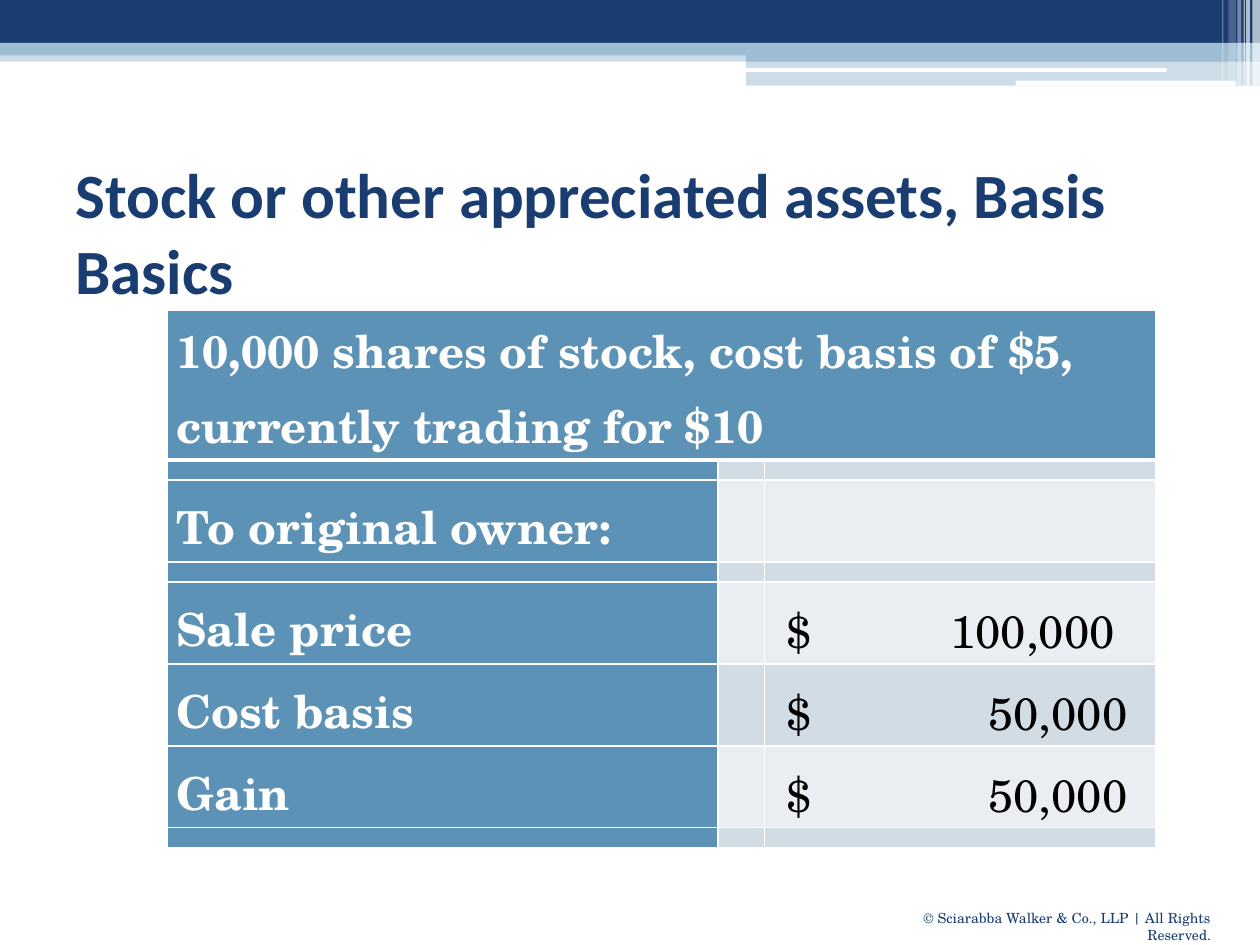
from lxml import etree
from pptx import Presentation
from pptx import util as u
from pptx.dml.color import RGBColor
from pptx.enum import shapes, text
from pptx.oxml import ns

NAVY = RGBColor(0x19, 0x3D, 0x71)
SKY = RGBColor(0x9D, 0xBD, 0xD2)
STEEL = RGBColor(0x5C, 0x92, 0xB5)
BAND_DARK = RGBColor(0xD2, 0xDC, 0xE5)
BAND_LIGHT = RGBColor(0xEA, 0xEE, 0xF3)
WHITE = RGBColor(0xFF, 0xFF, 0xFF)
BLACK = RGBColor(0, 0, 0)
SERIF = "TeX Gyre Schola"


def write(frame, content, size, color, font=SERIF, bold=False,
          align=text.PP_ALIGN.LEFT, spacing=None, tab=None):
    frame.word_wrap = True
    para = frame.paragraphs[0]
    para.alignment = align
    if spacing:
        para.line_spacing = spacing
    if tab:
        tabs = etree.SubElement(para._p.get_or_add_pPr(), ns.qn("a:tabLst"))
        etree.SubElement(tabs, ns.qn("a:tab"), pos=str(u.Inches(tab)), algn="r")
    span = para.add_run()
    span.text = content
    span.font.name = font
    span.font.size = u.Pt(size)
    span.font.bold = bold
    span.font.color.rgb = color


deck = Presentation()
deck.slide_width, deck.slide_height = u.Inches(10), u.Inches(7.5)
page = deck.slides.add_slide(deck.slide_layouts[6])

RECT = shapes.MSO_SHAPE.RECTANGLE
ROUND = shapes.MSO_SHAPE.ROUNDED_RECTANGLE
stripes = [
    (RECT, 0, 0.4, 10, 0.09, SKY, 50),
    (RECT, 0, 0, 10, 0.34, NAVY, 100),
    (RECT, 0, 0.34, 10, 0.1, SKY, 100),
    (RECT, 5.92, 0.39, 4.08, 0.1, SKY, 100),
    (RECT, 5.92, 0.48, 4.08, 0.2, SKY, 50),
    (ROUND, 5.91, 0.54, 3.35, 0.03, WHITE, 100),
    (ROUND, 8.06, 0.64, 1.75, 0.04, WHITE, 100),
    (RECT, 9.94, 0, 0.06, 0.68, WHITE, 65),
    (RECT, 9.89, 0, 0.03, 0.68, WHITE, 65),
    (RECT, 9.87, 0, 0.01, 0.68, WHITE, 60),
    (RECT, 9.82, 0, 0.03, 0.68, WHITE, 40),
    (RECT, 9.75, 0, 0.06, 0.64, WHITE, 20),
    (RECT, 9.7, 0, 0.01, 0.64, WHITE, 30),
]
for kind, left, top, width, height, color, opacity in stripes:
    stripe = page.shapes.add_shape(
        kind, u.Inches(left), u.Inches(top), u.Inches(width), u.Inches(height))
    stripe.shadow.inherit = False
    stripe.line.fill.background()
    stripe.fill.solid()
    stripe.fill.fore_color.rgb = color
    if opacity < 100:
        tint = stripe.fill._xPr.find(".//" + ns.qn("a:srgbClr"))
        etree.SubElement(tint, ns.qn("a:alpha"), val=str(opacity * 1000))

footer = page.shapes.add_textbox(
    u.Inches(6.76), u.Inches(7.17), u.Inches(2.95), u.Inches(0.24))
write(footer.text_frame, "© Sciarabba Walker & Co., LLP | All Rights Reserved.",
      8, NAVY, align=text.PP_ALIGN.RIGHT)

title = page.shapes.add_textbox(
    u.Inches(0.5), u.Inches(1.25), u.Inches(9), u.Inches(1.17))
title.text_frame.vertical_anchor = text.MSO_ANCHOR.MIDDLE
write(title.text_frame, "Stock or other appreciated assets, Basis Basics",
      36, NAVY, font="Calibri", bold=True)

rows = [
    (1.19, "10,000 shares of stock, cost basis of $5, currently trading for $10", "", None),
    (0.16, "", "", None),
    (0.65, "To original owner:", "", None),
    (0.16, "", "", None),
    (0.65, "Sale price", "$\t100,000", 2.61),
    (0.65, "Cost basis", "$\t50,000", 2.71),
    (0.65, "Gain", "$\t50,000", 2.71),
    (0.16, "", "", None),
]
table = page.shapes.add_table(
    len(rows), 3, u.Inches(1.33), u.Inches(2.46), u.Inches(7.83),
    u.Inches(sum(row[0] for row in rows))).table
for column, width in zip(table.columns, (4.37, 0.37, 3.1)):
    column.width = u.Inches(width)
table.cell(0, 0).merge(table.cell(0, 2))

for index, (height, label, amount, tab) in enumerate(rows):
    table.rows[index].height = u.Inches(height)
    band = BAND_DARK if index % 2 else BAND_LIGHT
    for place, content in enumerate((label, "", amount)):
        cell = table.cell(index, place)
        cell.vertical_anchor = text.MSO_ANCHOR.BOTTOM
        cell.margin_left = u.Inches(0.17 if tab and place == 2 else 0.07)
        cell.margin_right = u.Inches(0.07)
        cell.margin_top = cell.margin_bottom = 0
        for side in "LRTB":
            thick = (index, side) in ((0, "B"), (1, "T"))
            edge = etree.SubElement(cell._tc.get_or_add_tcPr(), ns.qn("a:ln" + side),
                                    w=str(u.Pt(3 if thick else 1)))
            paint = etree.SubElement(edge, ns.qn("a:solidFill"))
            etree.SubElement(paint, ns.qn("a:srgbClr"), val=str(WHITE))
        cell.fill.solid()
        cell.fill.fore_color.rgb = STEEL if index == 0 or place == 0 else band
        if content:
            write(cell.text_frame, content, 26, BLACK if place else WHITE,
                  bold=place == 0, spacing=1.07, tab=tab if place else None)
        else:
            ending = etree.SubElement(cell.text_frame.paragraphs[0]._p,
                                      ns.qn("a:endParaRPr"), sz="700")
            etree.SubElement(ending, ns.qn("a:latin"), typeface=SERIF)

deck.save("out.pptx")
